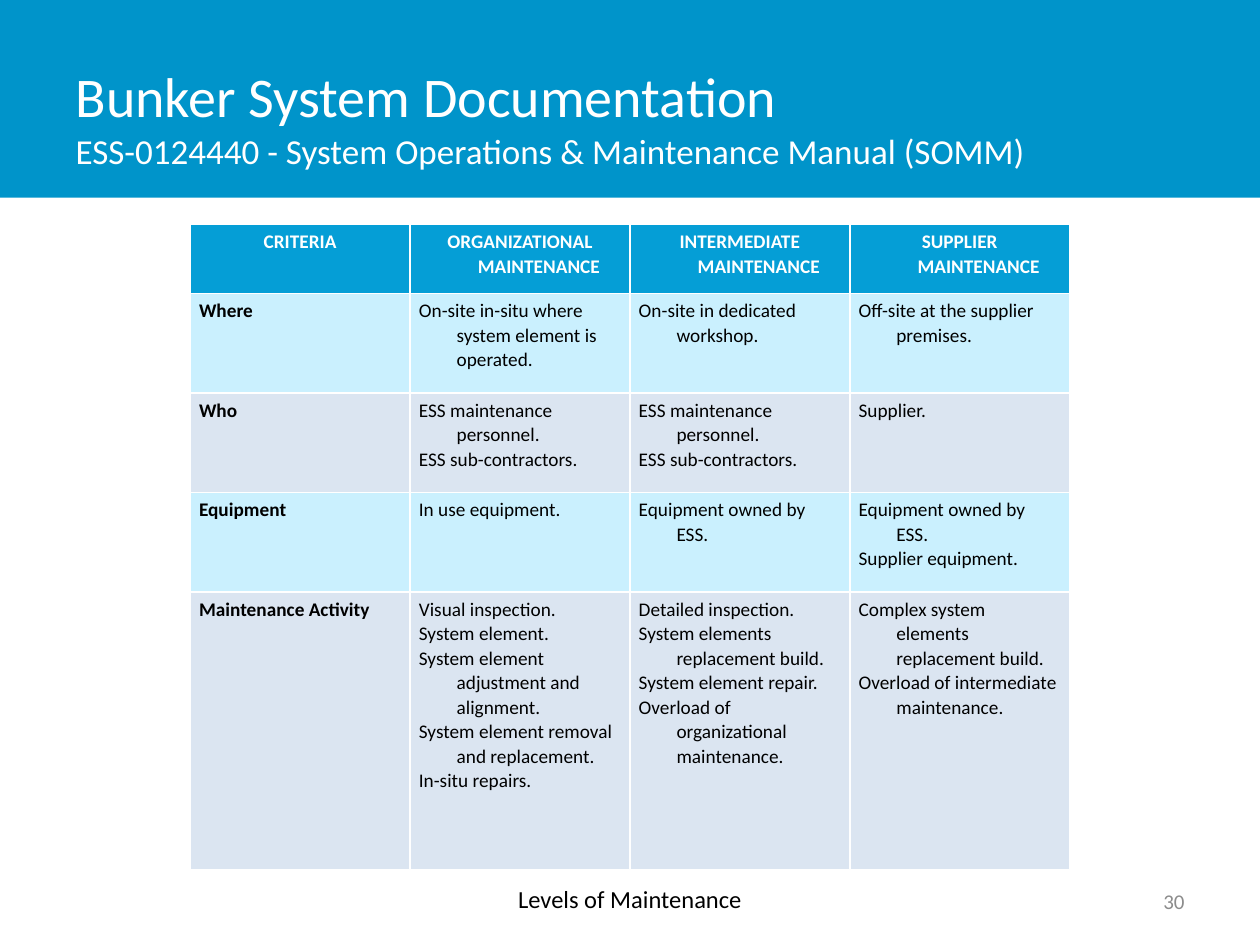
from dataclasses import dataclass

from lxml.etree import SubElement
from pptx import Presentation
from pptx.dml.color import RGBColor
from pptx.enum.shapes import MSO_SHAPE
from pptx.enum.text import MSO_ANCHOR, MSO_AUTO_SIZE, PP_ALIGN
from pptx.oxml.ns import qn
from pptx.util import Inches, Pt


@dataclass(frozen=True)
class Theme:
    """Colours, type sizes and spacing of the slide."""

    font: str = "Calibri"
    banner: str = "0094CA"
    header: str = "059ED6"
    bands: tuple = ("CAF0FE", "DBE5F1")
    white: str = "FFFFFF"
    black: str = "000000"
    grey: str = "8C8C8C"
    title_size: int = 32
    subtitle_size: int = 20
    caption_size: int = 14
    number_size: int = 12
    table_size: int = 11
    table_leading: int = 14
    hanging_indent: float = 0.3


class SlideBuilder:
    """Draws styled elements on a grid of 100 columns by 75 rows."""

    def __init__(self, presentation, theme):
        """Add a title-only slide and measure its grid."""
        self.theme = theme
        self.slide = presentation.slides.add_slide(presentation.slide_layouts[5])
        self.column = presentation.slide_width / 100
        self.row = presentation.slide_height / 75

    def place(self, left, top, width, height):
        """Turn grid units into slide lengths."""
        return (round(left * self.column), round(top * self.row),
                round(width * self.column), round(height * self.row))

    def format_run(self, run, size, color, bold=False):
        """Apply the theme font to one run."""
        run.font.name = self.theme.font
        run.font.size = Pt(size)
        run.font.bold = bold
        run.font.color.rgb = RGBColor.from_string(color)

    def banner(self, *area):
        """Draw the title band."""
        shape = self.slide.shapes.add_shape(MSO_SHAPE.RECTANGLE, *self.place(*area))
        shape.shadow.inherit = False
        shape.fill.solid()
        shape.fill.fore_color.rgb = RGBColor.from_string(self.theme.banner)
        shape.line.fill.background()

    def title(self, heading, subheading, *area):
        """Fill the title placeholder and bring it in front of the band."""
        shape = self.slide.shapes.title
        shape.left, shape.top, shape.width, shape.height = self.place(*area)
        self.slide.shapes.element.append(shape.element)
        frame = shape.text_frame
        frame.word_wrap = True
        frame.auto_size = MSO_AUTO_SIZE.NONE
        frame.vertical_anchor = MSO_ANCHOR.MIDDLE
        paragraph = frame.paragraphs[0]
        paragraph.alignment = PP_ALIGN.LEFT
        paragraph.text = heading
        paragraph.add_line_break()
        paragraph.add_run().text = subheading
        sizes = (self.theme.title_size, self.theme.subtitle_size)
        for run, size in zip(paragraph.runs, sizes):
            self.format_run(run, size, self.theme.white)

    def label(self, text, size, color, alignment, anchor, *area, wrap=True):
        """Add a one-line text box."""
        frame = self.slide.shapes.add_textbox(*self.place(*area)).text_frame
        frame.word_wrap = wrap
        frame.vertical_anchor = anchor
        frame.text = text
        frame.paragraphs[0].alignment = alignment
        self.format_run(frame.paragraphs[0].runs[0], size, color)

    def cell(self, cell, text, fill, color, bold, alignment):
        """Fill one table cell with hanging paragraphs and white borders."""
        cell.margin_left = cell.margin_right = Inches(0.07)
        cell.margin_top = cell.margin_bottom = Inches(0.04)
        properties = cell._tc.get_or_add_tcPr()
        for side in ("a:lnL", "a:lnR", "a:lnT", "a:lnB"):
            line = SubElement(properties, qn(side), w=str(Pt(1)))
            SubElement(SubElement(line, qn("a:solidFill")), qn("a:srgbClr"),
                       val=self.theme.white)
        cell.fill.solid()
        cell.fill.fore_color.rgb = RGBColor.from_string(fill)
        cell.text_frame.text = text
        indent = Inches(self.theme.hanging_indent)
        for paragraph in cell.text_frame.paragraphs:
            paragraph_properties = paragraph._p.get_or_add_pPr()
            paragraph_properties.set("marL", str(indent))
            paragraph_properties.set("indent", str(-indent))
            paragraph.alignment = alignment
            paragraph.line_spacing = Pt(self.theme.table_leading)
            for run in paragraph.runs:
                self.format_run(run, self.theme.table_size, color, bold)

    def table(self, rows, heights, *area):
        """Add a table with a header row and alternating bands."""
        theme = self.theme
        table = self.slide.shapes.add_table(
            len(rows), len(rows[0]), *self.place(*area)).table
        for row_index, (texts, height) in enumerate(zip(rows, heights)):
            table.rows[row_index].height = round(height * self.row)
            is_header = row_index == 0
            fill = theme.header if is_header else theme.bands[(row_index - 1) % 2]
            color = theme.white if is_header else theme.black
            alignment = PP_ALIGN.CENTER if is_header else PP_ALIGN.LEFT
            for column_index, text in enumerate(texts):
                cell = table.cell(row_index, column_index)
                bold = is_header or column_index == 0
                self.cell(cell, text, fill, color, bold, alignment)
                if column_index == len(texts) - 1:
                    cell.text_frame.paragraphs[-1].space_after = Pt(12)


MAINTENANCE_LEVELS = [
    ["CRITERIA", "ORGANIZATIONAL MAINTENANCE", "INTERMEDIATE MAINTENANCE",
     "SUPPLIER MAINTENANCE"],
    ["Where", "On-site in-situ where system element is operated.",
     "On-site in dedicated workshop.", "Off-site at the supplier premises."],
    ["Who", "ESS maintenance personnel.\nESS sub-contractors.",
     "ESS maintenance personnel.\nESS sub-contractors.", "Supplier."],
    ["Equipment", "In use equipment.", "Equipment owned by ESS.",
     "Equipment owned by ESS.\nSupplier equipment."],
    ["Maintenance Activity",
     "Visual inspection.\nSystem element.\n"
     "System element adjustment and alignment.\n"
     "System element removal and replacement.\nIn-situ repairs.",
     "Detailed inspection.\nSystem elements replacement build.\n"
     "System element repair.\nOverload of organizational maintenance.",
     "Complex system elements replacement build.\n"
     "Overload of intermediate maintenance."],
]


def main():
    """Build the maintenance levels slide."""
    presentation = Presentation()
    presentation.slide_width, presentation.slide_height = Inches(10), Inches(7.5)
    theme = Theme()
    builder = SlideBuilder(presentation, theme)
    builder.banner(0, 0, 100, 15.7)
    builder.title("Bunker System Documentation",
                  "ESS-0124440 - System Operations & Maintenance Manual (SOMM)",
                  5, 3, 78.1, 12.5)
    builder.table(MAINTENANCE_LEVELS, (5.5, 7.9, 7.9, 7.9, 22),
                  15.1, 17.8, 69.8, 51.2)
    builder.label("30", theme.number_size, theme.grey, PP_ALIGN.RIGHT,
                  MSO_ANCHOR.MIDDLE, 71.7, 69.5, 23.3, 4)
    builder.label("Levels of Maintenance", theme.caption_size, theme.black,
                  PP_ALIGN.CENTER, MSO_ANCHOR.TOP, 40, 69.7, 20, 3.4, wrap=False)
    presentation.save("out.pptx")


if __name__ == "__main__":
    main()
